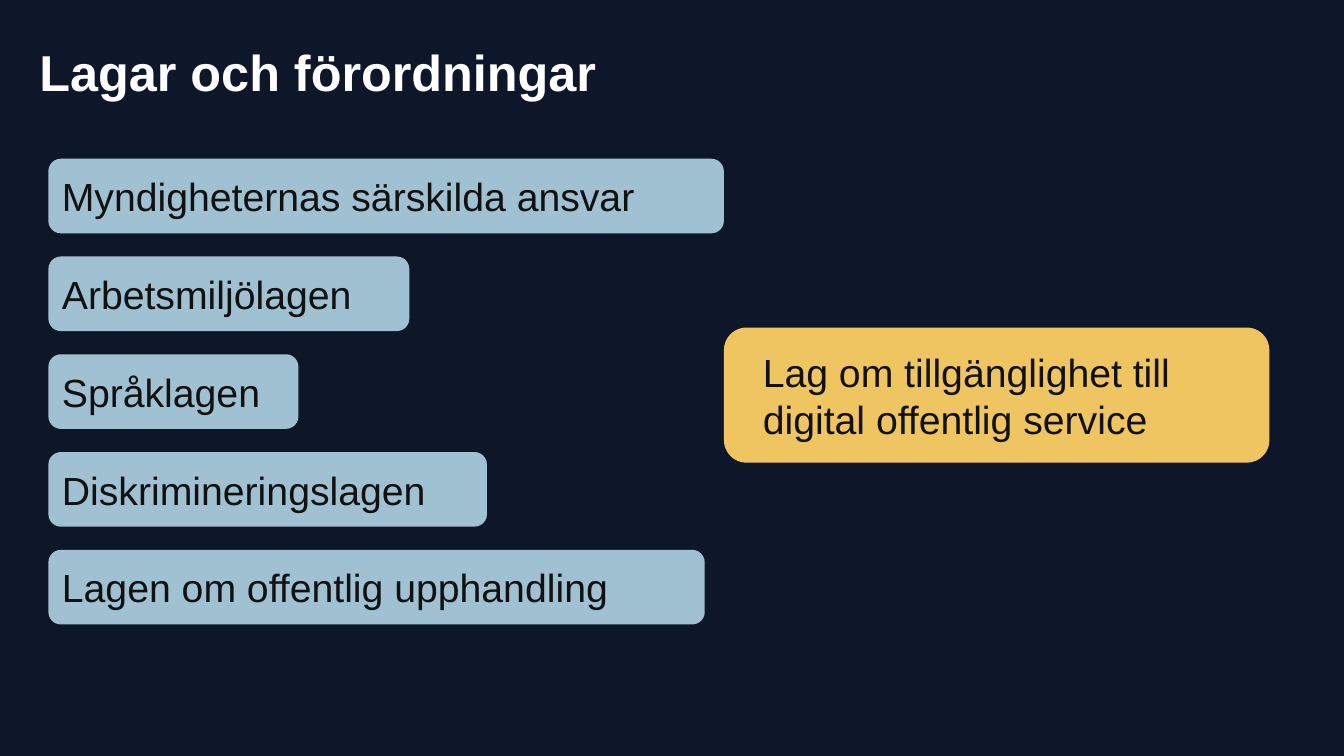
from pptx import Presentation
from pptx.dml.color import RGBColor
from pptx.enum.shapes import MSO_SHAPE
from pptx.enum.text import MSO_ANCHOR, MSO_AUTO_SIZE, PP_ALIGN
from pptx.util import Inches, Pt

ROUNDED = MSO_SHAPE.ROUNDED_RECTANGLE
MIDDLE = MSO_ANCHOR.MIDDLE
LEFT = PP_ALIGN.LEFT
NO_AUTOFIT = MSO_AUTO_SIZE.NONE

COLORS = {
    "background": "0E1729",
    "title": "FFFFFF",
    "text": "111111",
    "law": "A0C1D2",
    "highlight": "EFC561",
}

# Each law with the width of its box
LAWS = [
    ("Myndigheternas särskilda ansvar", 6.7),
    ("Arbetsmiljölagen", 3.58),
    ("Språklagen", 2.48),
    ("Diskrimineringslagen", 4.35),
    ("Lagen om offentlig upphandling", 6.51),
]
LAW_HEIGHT = 0.74
LAW_PITCH = 0.97


def color(name):
    return RGBColor.from_string(COLORS[name])


def place(shape, left, top, width, height):
    shape.left, shape.top = Inches(left), Inches(top)
    shape.width, shape.height = Inches(width), Inches(height)


def write_text(shape, text, size=28, color_name="text", bold=False,
               insets=(0.1, 0.05, 0.1, 0.05), line_spacing=1.0):
    frame = shape.text_frame
    frame.word_wrap = True
    frame.auto_size = NO_AUTOFIT
    frame.vertical_anchor = MIDDLE
    (frame.margin_left, frame.margin_top,
     frame.margin_right, frame.margin_bottom) = map(Inches, insets)
    paragraph = frame.paragraphs[0]
    paragraph.alignment = LEFT
    paragraph.line_spacing = line_spacing
    run = paragraph.add_run()
    run.text = text
    run.font.name = "Arial"
    run.font.size = Pt(size)
    run.font.bold = bold
    run.font.color.rgb = color(color_name)


def add_box(slide, text, left, top, width, height, fill, **text_format):
    shape = slide.shapes.add_shape(
        ROUNDED, Inches(left), Inches(top), Inches(width), Inches(height))
    shape.shadow.inherit = False
    shape.fill.solid()
    shape.fill.fore_color.rgb = color(fill)
    shape.line.fill.background()
    write_text(shape, text, **text_format)


def add_title(slide, left, top, width, height):
    title = slide.shapes.title
    place(title, left, top, width, height)
    write_text(title, "Lagar och förordningar", size=36, color_name="title",
               bold=True, insets=(0.39, 0.16, 0.39, 0.12), line_spacing=0.9)


def add_laws(slide, left, top):
    for row, (law, width) in enumerate(LAWS):
        add_box(slide, law, left, top + row * LAW_PITCH, width, LAW_HEIGHT, "law")


def add_highlight(slide, left, top, width, height):
    add_box(slide, "Lag om tillgänglighet till digital offentlig service",
            left, top, width, height, "highlight",
            insets=(0.32, 0.04, 0.04, 0.04))


def main():
    presentation = Presentation()
    presentation.slide_width = Inches(13.33)
    presentation.slide_height = Inches(7.5)
    slide = presentation.slides.add_slide(presentation.slide_layouts[5])
    slide.background.fill.solid()
    slide.background.fill.fore_color.rgb = color("background")

    add_title(slide, 0, 0, 11.5, 1.45)
    add_laws(slide, 0.48, 1.575)
    add_highlight(slide, 7.18, 3.25, 5.41, 1.34)

    presentation.save("out.pptx")


if __name__ == "__main__":
    main()
